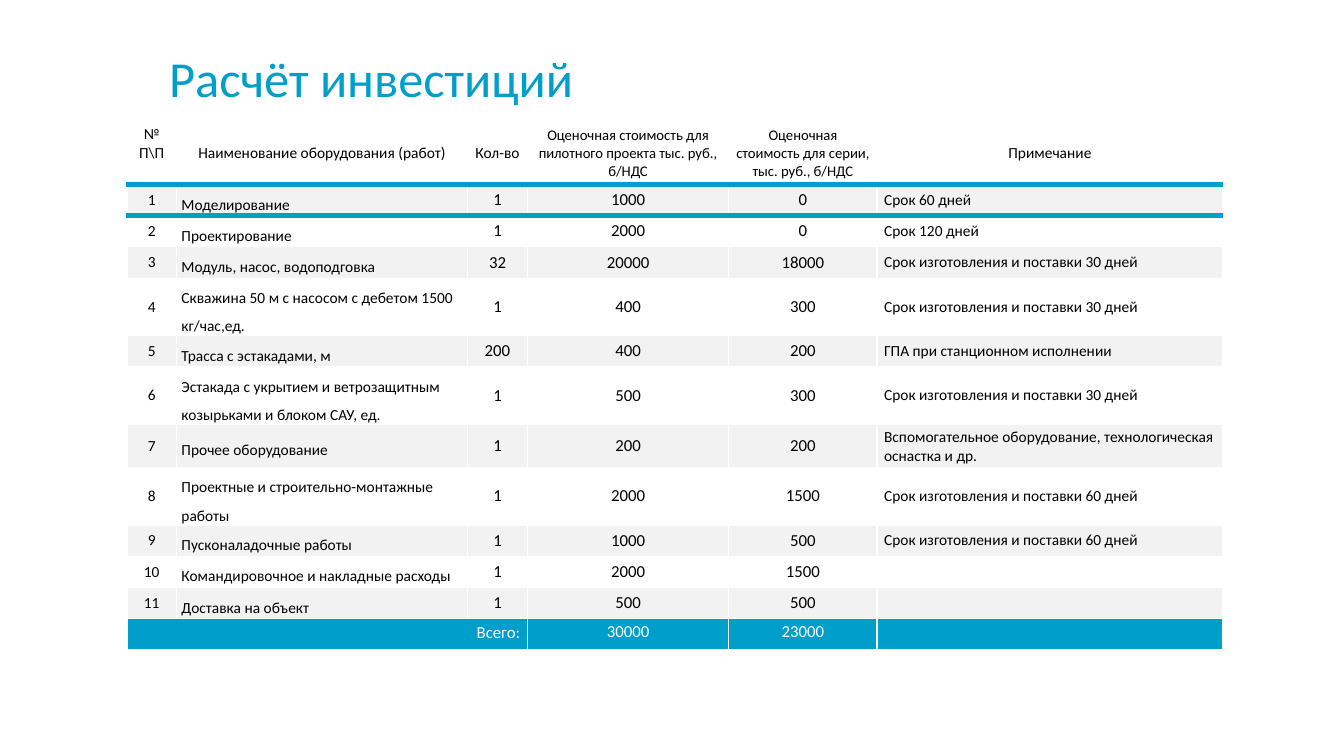
"""Build the investment calculation slide."""
from dataclasses import dataclass, replace
from typing import Any

from lxml.etree import SubElement
from pptx import Presentation
from pptx.dml.color import RGBColor
from pptx.enum.text import MSO_ANCHOR as Anchor, PP_ALIGN as Align
from pptx.oxml.ns import qn
from pptx.util import Inches, Pt

BLUE = RGBColor(0x00, 0x9E, 0xCB)
WHITE = RGBColor(0xFF, 0xFF, 0xFF)
BLACK = RGBColor(0x00, 0x00, 0x00)
GREY = RGBColor(0xF2, 0xF2, 0xF2)


@dataclass(frozen=True)
class CellStyle:
    size: float = 11
    align: Align = Align.CENTER
    anchor: Anchor = Anchor.MIDDLE
    spacing: float = 1.0
    margin_x: float = 0.07
    margin_y: float = 0.03
    color: RGBColor = BLACK


@dataclass(frozen=True)
class Column:
    heading: str
    width: float
    body: CellStyle
    header: CellStyle = CellStyle()


@dataclass(frozen=True)
class Work:
    name: str
    quantity: int
    pilot_cost: int
    series_cost: int
    note: str = ""


AMOUNT = CellStyle(size=12)
TOTAL = replace(AMOUNT, anchor=Anchor.TOP, color=WHITE)
COLUMNS = [
    Column("№ П\\П", 0.49, CellStyle(), CellStyle(anchor=Anchor.TOP)),
    Column("Наименование оборудования (работ)", 2.89,
           CellStyle(align=Align.LEFT, spacing=1.5, margin_x=0.05, margin_y=0.01)),
    Column("Кол-во", 0.59, AMOUNT),
    Column("Оценочная стоимость для пилотного проекта тыс. руб., б/НДС", 2,
           AMOUNT, CellStyle(size=10.5)),
    Column("Оценочная стоимость для серии, тыс. руб., б/НДС", 1.47,
           AMOUNT, CellStyle(size=10.5)),
    Column("Примечание", 3.43, CellStyle(align=Align.LEFT)),
]
DELIVERY_30 = "Срок изготовления и поставки 30 дней"
DELIVERY_60 = "Срок изготовления и поставки 60 дней"
WORKS = [
    Work("Моделирование", 1, 1000, 0, "Срок 60 дней"),
    Work("Проектирование", 1, 2000, 0, "Срок 120 дней"),
    Work("Модуль, насос, водоподговка", 32, 20000, 18000, DELIVERY_30),
    Work("Скважина 50 м с насосом с дебетом 1500 кг/час,ед.", 1, 400, 300, DELIVERY_30),
    Work("Трасса с эстакадами, м", 200, 400, 200, "ГПА при станционном исполнении"),
    Work("Эстакада с укрытием и ветрозащитным козырьками и блоком САУ, ед.",
         1, 500, 300, DELIVERY_30),
    Work("Прочее оборудование", 1, 200, 200,
         "Вспомогательное оборудование, технологическая оснастка и др."),
    Work("Проектные и строительно-монтажные работы", 1, 2000, 1500, DELIVERY_60),
    Work("Пусконаладочные работы", 1, 1000, 500, DELIVERY_60),
    Work("Командировочное и накладные расходы", 1, 2000, 1500),
    Work("Доставка на объект", 1, 500, 500),
]
TOTALS = ["Всего:", "", "", "30000", "23000", ""]
HEADER_HEIGHT, ROW_HEIGHT = 0.62, 0.31
RULED_EDGES = (1, 2)


def apply_format(target: Any, values: dict[str, Any]) -> None:
    for name, value in values.items():
        setattr(target, name, value)


def write_text(paragraph: Any, text: str, style: CellStyle) -> None:
    if text:
        paragraph.add_run().text = text
    apply_format(paragraph, {"alignment": style.align, "line_spacing": style.spacing})
    for font in [paragraph.font, *(run.font for run in paragraph.runs)]:
        apply_format(font, {"name": "Calibri", "size": Pt(style.size), "bold": False})
        font.color.rgb = style.color
    if not text:
        end = SubElement(paragraph._p, qn("a:endParaRPr"))
        end.set("sz", str(int(style.size * 100)))


def draw_border(cell: Any, side: str, color: RGBColor, width: float) -> None:
    line = SubElement(cell._tc.get_or_add_tcPr(), qn(f"a:ln{side}"), w=str(Pt(width)))
    SubElement(SubElement(line, qn("a:solidFill")), qn("a:srgbClr"), val=str(color))


def draw_cell(cell: Any, text: str, style: CellStyle, row: int,
              fill: RGBColor | None) -> None:
    apply_format(cell, {
        "vertical_anchor": style.anchor,
        "margin_left": Inches(style.margin_x), "margin_right": Inches(style.margin_x),
        "margin_top": Inches(style.margin_y), "margin_bottom": Inches(style.margin_y),
    })
    for side, edge in {"L": 0, "R": 0, "T": row, "B": row + 1}.items():
        ruled = edge in RULED_EDGES
        draw_border(cell, side, BLUE if ruled else WHITE, 4.5 if ruled else 1)
    if fill is None:
        cell.fill.background()
    else:
        cell.fill.solid()
        cell.fill.fore_color.rgb = fill
    write_text(cell.text_frame.paragraphs[0], text, style)


def draw_title(slide: Any) -> None:
    title = slide.shapes.add_textbox(Inches(1.58), Inches(0.4), Inches(11.03), Inches(0.81))
    apply_format(title.text_frame, {"word_wrap": True, "vertical_anchor": Anchor.MIDDLE})
    write_text(title.text_frame.paragraphs[0], "Расчёт инвестиций",
               CellStyle(size=36, align=Align.LEFT, spacing=0.9, color=BLUE))


def draw_investments(slide: Any) -> None:
    last = len(WORKS) + 1
    height = HEADER_HEIGHT + ROW_HEIGHT * last
    investments = slide.shapes.add_table(
        last + 1, len(COLUMNS), Inches(1.26), Inches(1.21), Inches(10.87), Inches(height)).table
    apply_format(investments, {"first_row": False, "horz_banding": False})
    for row, line in enumerate(investments.rows):
        line.height = Inches(ROW_HEIGHT if row else HEADER_HEIGHT)
    for index, column in enumerate(COLUMNS):
        investments.columns[index].width = Inches(column.width)
        draw_cell(investments.cell(0, index), column.heading, column.header, 0, None)
        total = TOTAL if index else replace(TOTAL, align=Align.RIGHT, margin_y=0.04)
        draw_cell(investments.cell(last, index), TOTALS[index], total, last, BLUE)
    for row, work in enumerate(WORKS, 1):
        values = (row, work.name, work.quantity, work.pilot_cost, work.series_cost, work.note)
        for index, (column, value) in enumerate(zip(COLUMNS, values)):
            draw_cell(investments.cell(row, index), str(value), column.body, row,
                      GREY if row % 2 else WHITE)
    investments.cell(last, 0).merge(investments.cell(last, 2))


def main() -> None:
    deck = Presentation()
    apply_format(deck, {"slide_width": Inches(13.33), "slide_height": Inches(7.5)})
    slide = deck.slides.add_slide(deck.slide_layouts[6])
    draw_title(slide)
    draw_investments(slide)
    deck.save("out.pptx")


if __name__ == "__main__":
    main()
